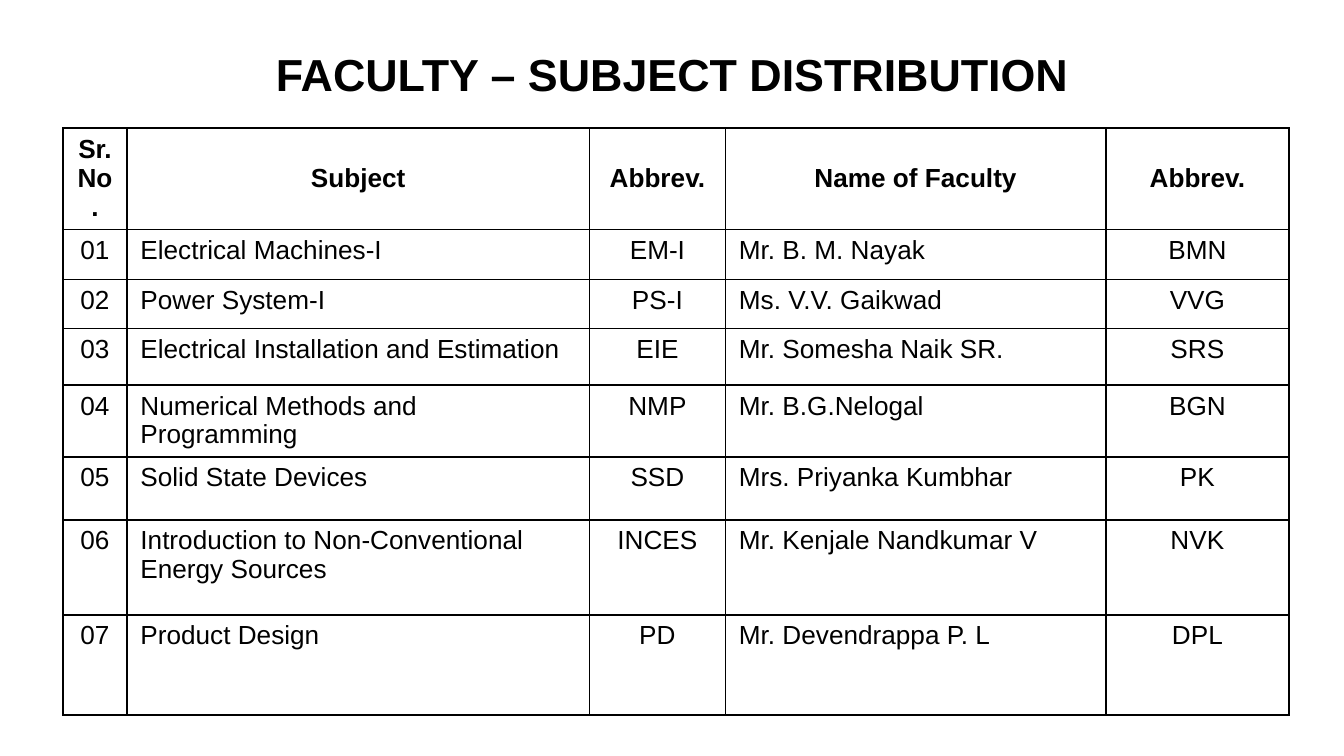
from dataclasses import dataclass
from typing import Any, NamedTuple

from lxml.etree import SubElement as Sub
from pptx import Presentation
from pptx.dml.color import RGBColor as Rgb
from pptx.enum.text import MSO_ANCHOR as Anchor, PP_ALIGN as Align
from pptx.oxml.ns import qn
from pptx.util import Cm, Pt


@dataclass(frozen=True)
class Theme:
    font: str = "Arial"
    ink: Rgb = Rgb(0, 0, 0)
    paper: Rgb = Rgb(255, 255, 255)
    title: Pt = Pt(24)
    body: Pt = Pt(14)
    rule: Pt = Pt(1)
    pitch: float = 0.98


class Column(NamedTuple):
    head: str
    width: float
    align: Any


class Entry(NamedTuple):
    height: float
    subject: str
    code: str
    name: str
    short: str


THEME = Theme()
TITLE = "FACULTY – SUBJECT DISTRIBUTION"
HEAD_HIGH = 1.92
HEAD_CELL = {"vertical_anchor": Anchor.MIDDLE,
             "margin_top": Cm(0.08), "margin_bottom": Cm(0.08)}
BODY_CELL = {"vertical_anchor": Anchor.TOP,
             "margin_top": Cm(0.13), "margin_bottom": Cm(0.06)}
COLS = [
    Column("Sr. No.", 1.21, Align.CENTER),
    Column("Subject", 8.74, Align.LEFT),
    Column("Abbrev.", 2.57, Align.CENTER),
    Column("Name of Faculty", 7.19, Align.LEFT),
    Column("Abbrev.", 3.46, Align.CENTER),
]
ENTRIES = [
    Entry(0.94, "Electrical Machines-I", "EM-I", "Mr. B. M. Nayak", "BMN"),
    Entry(0.93, "Power System-I", "PS-I", "Ms. V.V. Gaikwad", "VVG"),
    Entry(1.07, "Electrical Installation and Estimation", "EIE",
          "Mr. Somesha Naik SR.", "SRS"),
    Entry(1.36, "Numerical Methods and Programming", "NMP",
          "Mr. B.G.Nelogal", "BGN"),
    Entry(1.19, "Solid State Devices", "SSD", "Mrs. Priyanka Kumbhar", "PK"),
    Entry(1.79, "Introduction to Non-Conventional Energy Sources", "INCES",
          "Mr. Kenjale Nandkumar V", "NVK"),
    Entry(1.89, "Product Design", "PD", "Mr. Devendrappa P. L", "DPL"),
]


def assign(item: Any, values: dict[str, Any]) -> None:
    for key, value in values.items():
        setattr(item, key, value)


def write(frame: Any, text: str, size: Pt, bold: bool, align: Any) -> None:
    para = frame.paragraphs[0]
    assign(para, {"alignment": align, "line_spacing": THEME.pitch})
    run = para.add_run()
    run.text = text
    assign(run.font, {"name": THEME.font, "size": size, "bold": bold})
    run.font.color.rgb = THEME.ink


def border(cell: Any) -> None:
    """Rule all four sides; the lines must come before the cell's fill."""
    props = cell._tc.get_or_add_tcPr()
    for side in ("a:lnL", "a:lnR", "a:lnT", "a:lnB"):
        line = Sub(props, qn(side), w=str(THEME.rule))
        fill = Sub(line, qn("a:solidFill"))
        Sub(fill, qn("a:srgbClr"), val=str(THEME.ink))
    cell.fill.solid()
    cell.fill.fore_color.rgb = THEME.paper


def add_title(slide: Any) -> None:
    box = slide.shapes.add_textbox(Cm(0), Cm(0.64), Cm(25.4), Cm(1.85))
    frame = box.text_frame
    assign(frame, {
        "word_wrap": True, "vertical_anchor": Anchor.TOP,
        "margin_left": Cm(0.25), "margin_right": Cm(0.25),
        "margin_top": Cm(0.3), "margin_bottom": Cm(0.25),
    })
    write(frame, TITLE, THEME.title, True, Align.CENTER)


def add_grid(slide: Any) -> None:
    highs = [HEAD_HIGH] + [entry.height for entry in ENTRIES]
    rows = [[col.head for col in COLS]]
    rows += [[f"{num:02}", *entry[1:]] for num, entry in enumerate(ENTRIES, 1)]
    wide = sum(col.width for col in COLS)
    table = slide.shapes.add_table(
        len(rows), len(COLS), Cm(1.19), Cm(2.42), Cm(wide), Cm(sum(highs))
    ).table
    assign(table, {"first_row": False, "horz_banding": False})
    for place, col in zip(table.columns, COLS):
        place.width = Cm(col.width)
    for top, (high, texts) in enumerate(zip(highs, rows)):
        table.rows[top].height = Cm(high)
        head = top == 0
        for left, (col, text) in enumerate(zip(COLS, texts)):
            cell = table.cell(top, left)
            assign(cell, HEAD_CELL if head else BODY_CELL)
            align = Align.CENTER if head else col.align
            write(cell.text_frame, text, THEME.body, head, align)
            border(cell)


def main() -> None:
    deck = Presentation()
    assign(deck, {"slide_width": Cm(25.4), "slide_height": Cm(14.29)})
    slide = deck.slides.add_slide(deck.slide_layouts[6])
    add_title(slide)
    add_grid(slide)
    deck.save("out.pptx")


if __name__ == "__main__":
    main()
